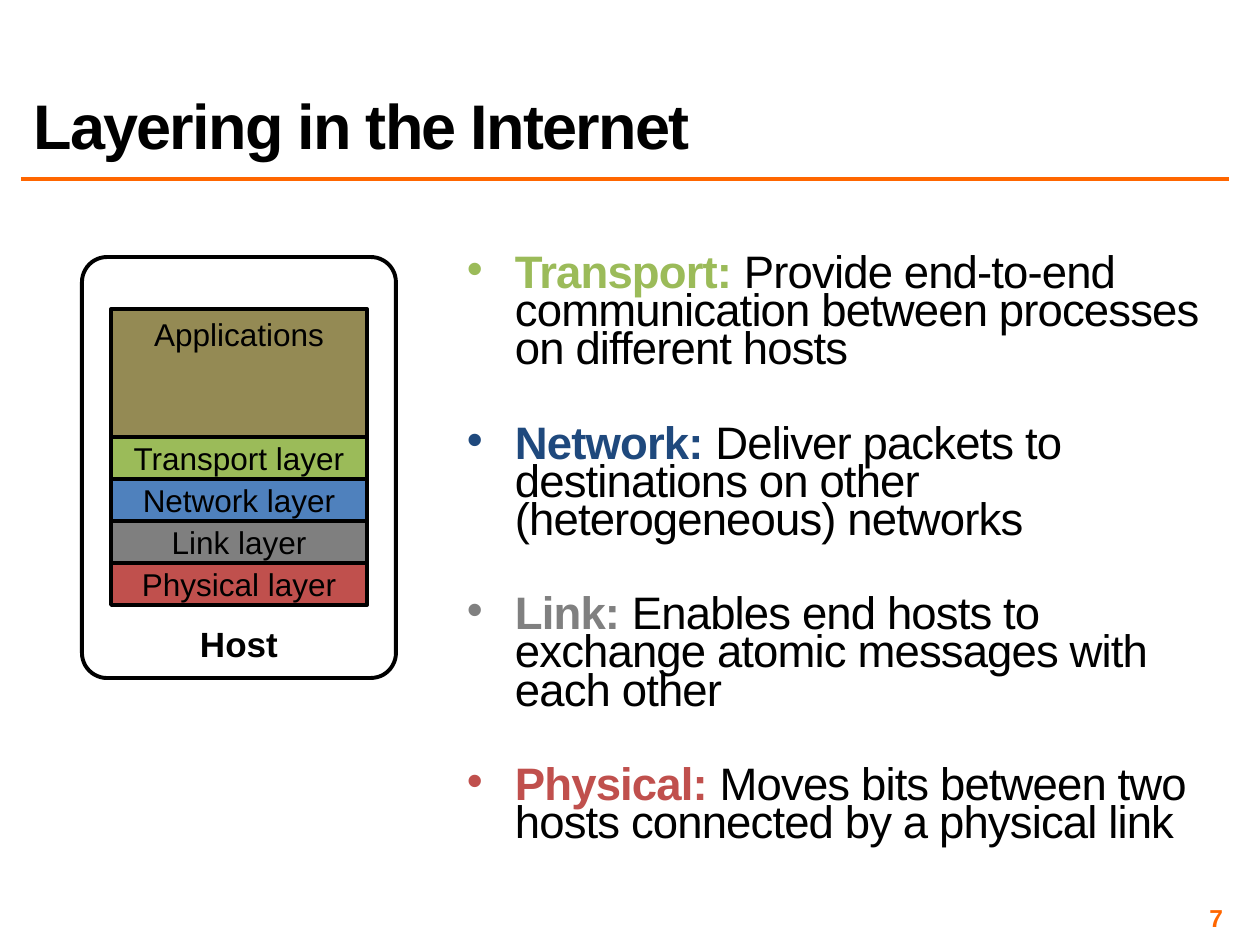
from lxml.etree import SubElement
from pptx import Presentation
from pptx.dml.color import RGBColor
from pptx.enum.shapes import MSO_CONNECTOR, MSO_SHAPE
from pptx.enum.text import MSO_ANCHOR, PP_ALIGN
from pptx.oxml.ns import qn
from pptx.util import Pt

COLORS = {
    "black": "000000", "orange": "FF6600", "olive": "948A54",
    "green": "9BBB59", "blue": "4F81BD", "navy": "1F497D",
    "gray": "7F7F7F", "light gray": "808080", "red": "C0504D",
}
TITLE = "Layering in the Internet"
PAGE_NUMBER = "7"
LAYERS = [  # label, fill, height, anchor
    ("Applications", "olive", 128, MSO_ANCHOR.TOP),
    ("Transport layer", "green", 42, MSO_ANCHOR.MIDDLE),
    ("Network layer", "blue", 42, MSO_ANCHOR.MIDDLE),
    ("Link layer", "gray", 42, MSO_ANCHOR.MIDDLE),
    ("Physical layer", "red", 42, MSO_ANCHOR.MIDDLE),
]
ROLES = [  # layer, colour, what it does
    ("Transport:", "green",
     " Provide end-to-end communication between processes on different hosts"),
    ("Network:", "navy",
     " Deliver packets to destinations on other (heterogeneous) networks"),
    ("Link:", "light gray",
     " Enables end hosts to exchange atomic messages with each other"),
    ("Physical:", "red",
     " Moves bits between two hosts connected by a physical link"),
]
STACK_LEFT, STACK_TOP, STACK_WIDTH = 111, 309, 256
HOST_BOX = (82, 257, 314, 421)
ROLES_BOX = (462, 199, 766, 670)
SMALL_INSET, ROLES_TOP_INSET, HANGING_INDENT = 5, 59, 48
ROLE_GAP = Pt(32)


def px(length):
    return round(length * 914400 / 126)


def color(name):
    return RGBColor.from_string(COLORS[name])


def add_span(para, text, size, color_name="black", bold=False, spacing=0):
    """Add a run; spacing is in hundredths of a point."""
    span = para.add_run()
    span.text = text
    for name, value in {"name": "Arial", "size": Pt(size), "bold": bold}.items():
        setattr(span.font, name, value)
    span.font.color.rgb = color(color_name)
    if spacing:
        span.font._element.set("spc", str(spacing))


def set_frame(shape, **formats):
    frame = shape.text_frame
    for name, value in formats.items():
        setattr(frame, name, value)
    return frame


def add_box(page, box, inset=None, **formats):
    shape = page.shapes.add_textbox(*map(px, box))
    if inset is not None:
        sides = ("left", "top", "right", "bottom")
        formats = {f"margin_{side}": px(inset) for side in sides} | formats
    return set_frame(shape, word_wrap=True, **formats)


def add_outlined(page, kind, box, fill=None):
    shape = page.shapes.add_shape(kind, *map(px, box))
    shape.shadow.inherit = False
    if fill:
        shape.fill.solid()
        shape.fill.fore_color.rgb = color(fill)
    else:
        shape.fill.background()
    shape.line.color.rgb = color("black")
    shape.line.width = Pt(2.25)
    return shape


def add_heading(page):
    rule = page.shapes.add_connector(MSO_CONNECTOR.STRAIGHT, *map(px, (21, 179, 1229, 179)))
    rule.line.color.rgb = color("orange")
    rule.line.width = Pt(2)
    SubElement(rule._element.spPr, qn("a:effectLst"))
    para = add_box(page, (21, 21, 1207, 147), vertical_anchor=MSO_ANCHOR.BOTTOM).paragraphs[0]
    para.line_spacing = 0.8
    add_span(para, TITLE, 36, bold=True, spacing=-100)


def add_roles(page):
    frame = add_box(page, ROLES_BOX, SMALL_INSET, margin_top=px(ROLES_TOP_INSET))
    for index, (layer, color_name, duty) in enumerate(ROLES):
        para = frame.add_paragraph() if index else frame.paragraphs[0]
        para.line_spacing = 0.7
        para.space_before = ROLE_GAP if index else Pt(0)
        properties = para._p.get_or_add_pPr()
        properties.set("marL", str(px(HANGING_INDENT)))
        properties.set("indent", str(-px(HANGING_INDENT)))
        SubElement(properties, qn("a:buFont"), typeface="Arial")
        SubElement(properties, qn("a:buChar"), char="•")
        add_span(para, layer, 26, color_name, bold=True, spacing=-50)
        add_span(para, duty, 26, spacing=-50)


def add_host(page):
    top = STACK_TOP
    for label, fill, height, anchor in LAYERS:
        box = (STACK_LEFT, top, STACK_WIDTH, height)
        layer = add_outlined(page, MSO_SHAPE.RECTANGLE, box, fill)
        para = set_frame(layer, word_wrap=False, vertical_anchor=anchor).paragraphs[0]
        para.alignment = PP_ALIGN.CENTER
        add_span(para, label, 18)
        top += height
    host = add_outlined(page, MSO_SHAPE.ROUNDED_RECTANGLE, HOST_BOX)
    host.adjustments[0] = 0.08
    para = set_frame(host, vertical_anchor=MSO_ANCHOR.BOTTOM).paragraphs[0]
    para.alignment = PP_ALIGN.CENTER
    add_span(para, "Host", 20, bold=True)


def add_page_number(page):
    frame = add_box(page, (935, 903, 293, 29), SMALL_INSET, vertical_anchor=MSO_ANCHOR.MIDDLE)
    para = frame.paragraphs[0]
    para.alignment = PP_ALIGN.RIGHT
    add_span(para, PAGE_NUMBER, 14, "orange", bold=True)


def main():
    deck = Presentation()
    deck.slide_width, deck.slide_height = px(1260), px(945)
    page = deck.slides.add_slide(deck.slide_layouts[6])
    for add_part in (add_heading, add_roles, add_page_number, add_host):
        add_part(page)
    deck.save("out.pptx")


if __name__ == "__main__":
    main()
